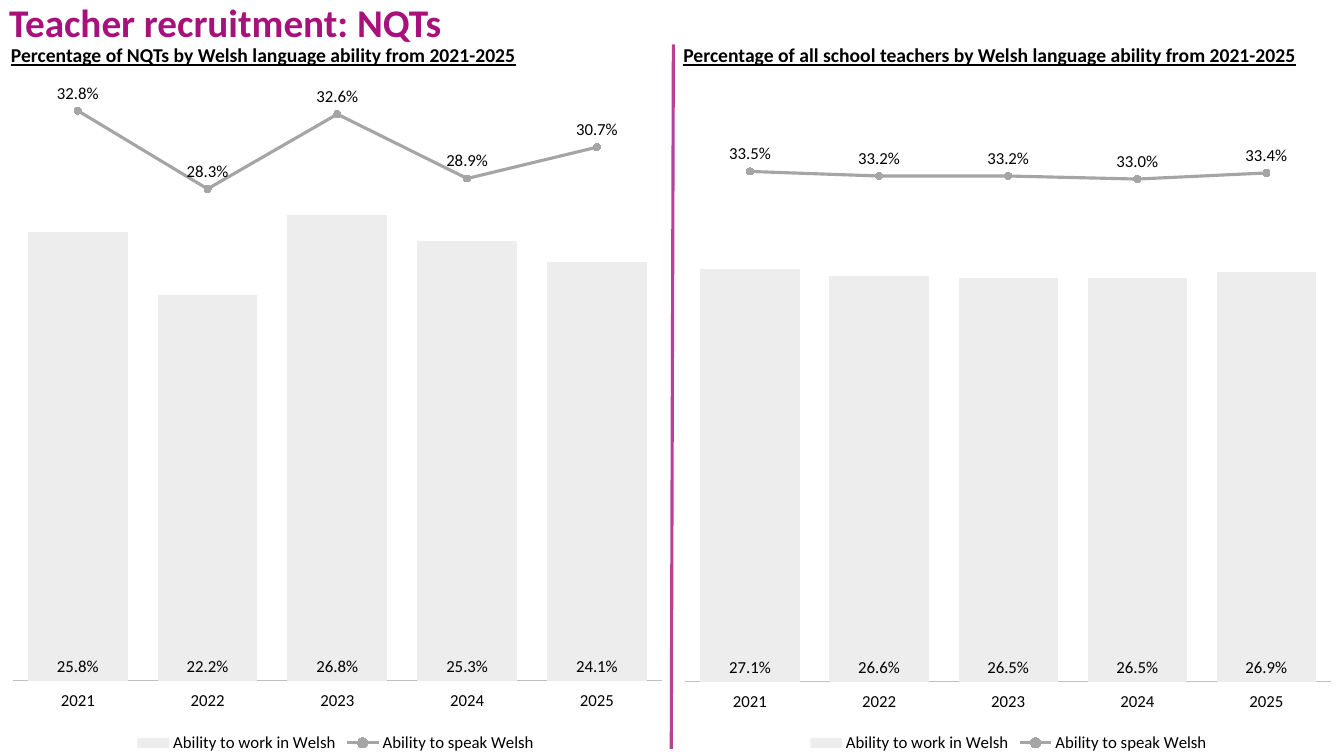
from dataclasses import dataclass

from lxml.etree import SubElement
from pptx import Presentation
from pptx.chart.chart import Chart
from pptx.chart.data import CategoryChartData
from pptx.dml.color import RGBColor
from pptx.enum.chart import (XL_CHART_TYPE, XL_LABEL_POSITION, XL_LEGEND_POSITION,
                             XL_MARKER_STYLE, XL_TICK_LABEL_POSITION, XL_TICK_MARK)
from pptx.enum.shapes import MSO_CONNECTOR
from pptx.enum.text import MSO_ANCHOR, PP_ALIGN
from pptx.oxml import parse_xml
from pptx.oxml.ns import nsdecls, qn
from pptx.slide import Slide
from pptx.text.text import Font
from pptx.util import Pt

COLOURS = {"magenta": "A8117C", "text": "000000", "bar": "EDEDED",
           "line": "A5A5A5", "axis": "BFBFBF"}
FONT = "Calibri"
YEARS = ["2021", "2022", "2023", "2024", "2025"]
PERCENT = "0.0%"


@dataclass
class Panel:
    heading: str
    heading_left: float
    heading_width: float
    chart_left: float
    chart_width: float
    plot_area: tuple[float, float, float, float]
    axis_maximum: float
    work_in_welsh: list[float]
    speak_welsh: list[float]


PANELS = [
    Panel("Percentage of NQTs by Welsh language ability from 2021-2025",
          0.7, 478, -1.4, 482.4, (0.022, 0, 0.961, 0.889), 0.35,
          [0.258, 0.222, 0.268, 0.253, 0.241],
          [0.328, 0.283, 0.326, 0.289, 0.307]),
    Panel("Percentage of all school teachers by Welsh language ability from 2021-2025",
          481, 468, 481, 478.8, (0.018, 0, 0.963, 0.89), 0.4,
          [0.271, 0.266, 0.265, 0.265, 0.269],
          [0.335, 0.332, 0.332, 0.33, 0.334]),
]


def colour(name: str) -> RGBColor:
    return RGBColor.from_string(COLOURS[name])


def style_font(font: Font, size: float, colour_name: str = "text", bold: bool = False) -> None:
    font.name = FONT
    font.size = Pt(size)
    font.bold = bold
    font.color.rgb = colour(colour_name)


def set_plot_area(chart: Chart, plot_area: tuple[float, float, float, float]) -> None:
    """Fix the inner plot area as fractions of the chart: left, top, width, height."""
    container = chart._chartSpace.chart.plotArea
    for layout in container.findall(qn("c:layout")):
        container.remove(layout)
    places = "".join(f'<c:{tag} val="{value}"/>' for tag, value in zip("xywh", plot_area))
    container.insert(0, parse_xml(
        f'<c:layout {nsdecls("c")}><c:manualLayout><c:layoutTarget val="inner"/>'
        f'<c:xMode val="edge"/><c:yMode val="edge"/>{places}</c:manualLayout></c:layout>'))


def turn_last_series_into_line(chart: Chart) -> None:
    """Move the last column series to a line plot on the same axes."""
    bar_plot = chart._chartSpace.chart.plotArea.find(qn("c:barChart"))
    series = bar_plot.findall(qn("c:ser"))[-1]
    for element in series.findall(qn("c:invertIfNegative")):
        series.remove(element)
    line_plot = parse_xml(
        f'<c:lineChart {nsdecls("c")}><c:grouping val="standard"/>'
        '<c:varyColors val="0"/></c:lineChart>')
    line_plot.append(series)
    SubElement(line_plot, qn("c:marker")).set("val", "1")
    for axis in bar_plot.findall(qn("c:axId")):
        SubElement(line_plot, qn("c:axId")).set("val", axis.get("val"))
    bar_plot.addnext(line_plot)


def style_axes(chart: Chart, maximum: float) -> None:
    category_axis = chart.category_axis
    category_axis.major_tick_mark = XL_TICK_MARK.NONE
    category_axis.minor_tick_mark = XL_TICK_MARK.NONE
    category_axis.tick_label_position = XL_TICK_LABEL_POSITION.LOW
    category_axis.format.line.color.rgb = colour("axis")
    category_axis.format.line.width = Pt(0.75)
    style_font(category_axis.tick_labels.font, 12)
    value_axis = chart.value_axis
    value_axis.minimum_scale = 0
    value_axis.maximum_scale = maximum
    value_axis.has_major_gridlines = False
    value_axis.visible = False


def add_ability_chart(slide: Slide, panel: Panel) -> None:
    data = CategoryChartData(number_format=PERCENT)
    data.categories = YEARS
    data.add_series("Ability to work in Welsh", panel.work_in_welsh)
    data.add_series("Ability to speak Welsh", panel.speak_welsh)
    chart = slide.shapes.add_chart(
        XL_CHART_TYPE.COLUMN_CLUSTERED, Pt(panel.chart_left), Pt(51.8),
        Pt(panel.chart_width), Pt(488.9), data).chart
    chart.has_title = False
    style_font(chart.font, 12)
    turn_last_series_into_line(chart)
    set_plot_area(chart, panel.plot_area)
    style_axes(chart, panel.axis_maximum)

    column_plot, line_plot = chart.plots
    column_plot.gap_width = 30
    column_plot.vary_by_categories = False
    columns, line = column_plot.series[0], line_plot.series[0]
    columns.format.fill.solid()
    columns.format.fill.fore_color.rgb = colour("bar")
    line.smooth = False
    line.format.line.color.rgb = colour("line")
    line.format.line.width = Pt(2.25)
    line.marker.style = XL_MARKER_STYLE.CIRCLE
    line.marker.size = 5
    line.marker.format.fill.solid()
    line.marker.format.fill.fore_color.rgb = colour("line")
    line.marker.format.line.color.rgb = colour("line")

    for series, position in ((columns, XL_LABEL_POSITION.INSIDE_BASE),
                             (line, XL_LABEL_POSITION.ABOVE)):
        labels = series.data_labels
        labels.show_value = True
        labels.number_format = PERCENT
        labels.number_format_is_linked = False
        labels.position = position
        style_font(labels.font, 12)

    chart.has_legend = True
    chart.legend.position = XL_LEGEND_POSITION.BOTTOM
    chart.legend.include_in_layout = False
    style_font(chart.legend.font, 12)


def add_heading(slide: Slide, panel: Panel) -> None:
    box = slide.shapes.add_textbox(Pt(panel.heading_left), Pt(27.4),
                                   Pt(panel.heading_width), Pt(24.5))
    box.text_frame.word_wrap = True
    paragraph = box.text_frame.paragraphs[0]
    paragraph.text = panel.heading
    style_font(paragraph.font, 14, bold=True)
    paragraph.font.underline = True


def set_title(slide: Slide, text: str) -> None:
    title = slide.shapes.title
    title.left, title.top, title.width, title.height = Pt(-0.7), Pt(0), Pt(363.6), Pt(35.3)
    title.text_frame.vertical_anchor = MSO_ANCHOR.MIDDLE
    paragraph = title.text_frame.paragraphs[0]
    paragraph.text = text
    paragraph.alignment = PP_ALIGN.LEFT
    paragraph.line_spacing = 0.9
    style_font(paragraph.font, 28, "magenta", bold=True)


def add_divider(slide: Slide) -> None:
    divider = slide.shapes.add_connector(
        MSO_CONNECTOR.STRAIGHT, Pt(481), Pt(31.7), Pt(479.5), Pt(535))
    divider.line.color.rgb = colour("magenta")
    divider.line.width = Pt(2.25)
    properties = divider._element.spPr
    rgb = properties.find(".//" + qn("a:srgbClr"))
    SubElement(rgb, qn("a:alpha")).set("val", "80000")
    SubElement(properties, qn("a:effectLst"))


def main() -> None:
    presentation = Presentation()
    presentation.slide_width, presentation.slide_height = Pt(960), Pt(540)
    slide = presentation.slides.add_slide(presentation.slide_layouts.get_by_name("Title Only"))
    set_title(slide, "Teacher recruitment: NQTs")
    for panel in PANELS:
        add_ability_chart(slide, panel)
        add_heading(slide, panel)
    add_divider(slide)
    presentation.save("out.pptx")


if __name__ == "__main__":
    main()
